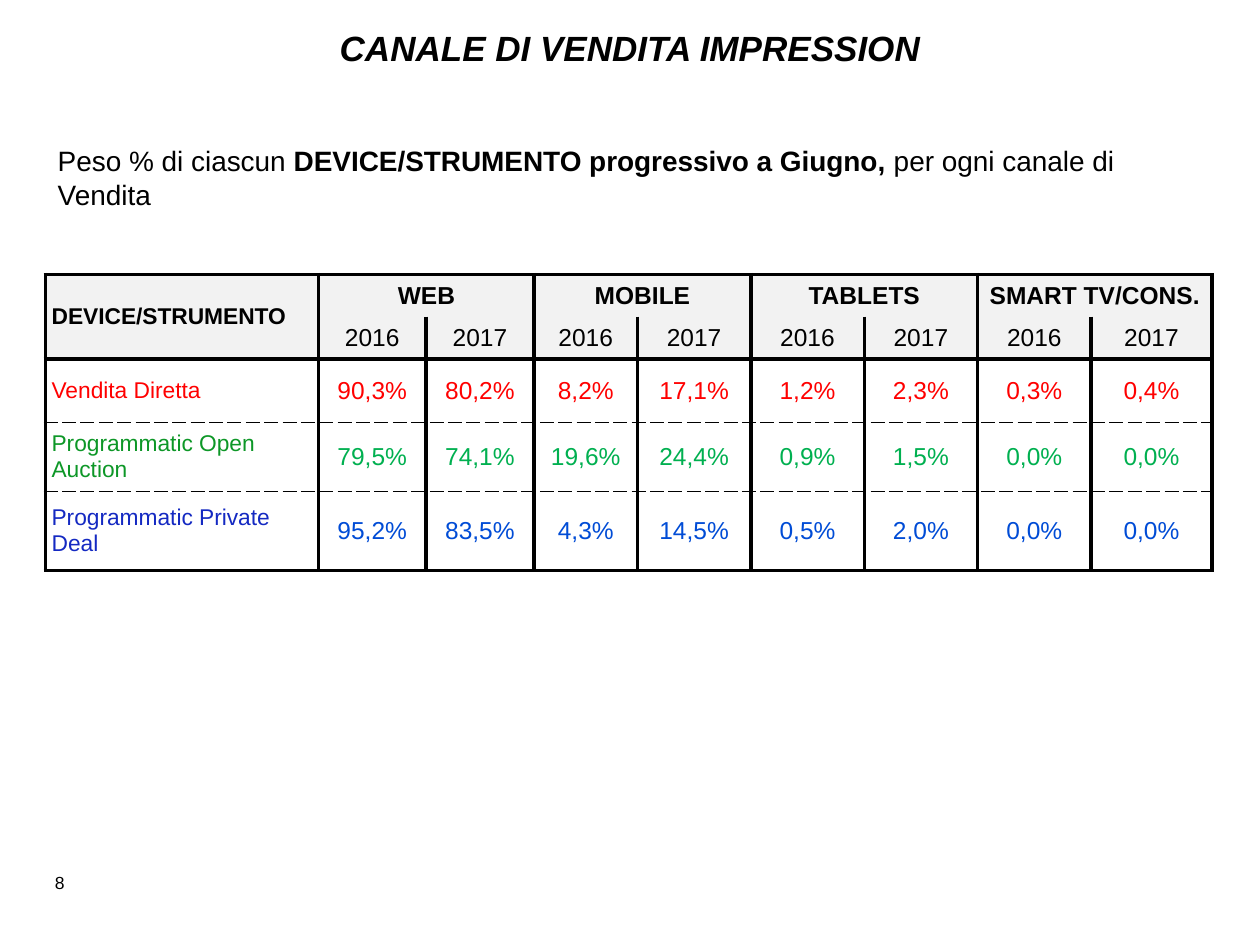
"""Builds the slide on the weight of each device by sales channel."""
from dataclasses import dataclass

import pptx
import pptx.dml.color
import pptx.enum.text
import pptx.oxml.ns
import pptx.util
from lxml import etree
from pptx.util import Inches

TITLE = "CANALE DI VENDITA IMPRESSION"
INTRO = [
    ("Peso % di ciascun ", False),
    ("DEVICE/STRUMENTO progressivo a Giugno,", True),
    (" per ogni canale di Vendita", False),
]
PAGE_NUMBER = "8"
CORNER = "DEVICE/STRUMENTO"
DEVICES = ["WEB", "MOBILE", "TABLETS", "SMART TV/CONS."]
YEARS = ["2016", "2017"]
CHANNELS = [
    (["Vendita Diretta"], "FF0000", "FF0000",
     ["90,3%", "80,2%", "8,2%", "17,1%", "1,2%", "2,3%", "0,3%", "0,4%"]),
    (["Programmatic Open Auction"], "0D9727", "00B050",
     ["79,5%", "74,1%", "19,6%", "24,4%", "0,9%", "1,5%", "0,0%", "0,0%"]),
    (["Programmatic Private", "Deal"], "1429C2", "004CD6",
     ["95,2%", "83,5%", "4,3%", "14,5%", "0,5%", "2,0%", "0,0%", "0,0%"]),
]
COLUMN_WIDTHS = [2.17, 0.85, 0.86, 0.82, 0.9, 0.9, 0.9, 0.9, 0.96]
ROW_HEIGHTS = [0.33, 0.33, 0.5, 0.55, 0.63]
HEADER_ROWS = 2
LABEL_INSETS = (0.05, 0.05, 0.05, 0.05)
VALUE_INSETS = (0.01, 0.01, 0.01, 0)
LEFT, CENTER, RIGHT = (
    pptx.enum.text.PP_ALIGN.LEFT,
    pptx.enum.text.PP_ALIGN.CENTER,
    pptx.enum.text.PP_ALIGN.RIGHT,
)


@dataclass(frozen=True)
class Theme:
    font: str = "Arial"
    ink: str = "000000"
    header: str = "F2F2F2"
    body: str = "FFFFFF"
    title: int = 20
    intro: int = 16
    value: int = 14
    label: int = 13
    number: int = 10
    strong: float = 2.25
    thin: float = 0.25


THEME = Theme()


def add_run(paragraph, text, size, color=THEME.ink, bold=False, italic=False):
    run = paragraph.add_run()
    run.text = text
    run.font.name = THEME.font
    run.font.size = pptx.util.Pt(size)
    run.font.bold = bold
    run.font.italic = italic
    run.font.color.rgb = pptx.dml.color.RGBColor.from_string(color)


def add_text(slide, area, align):
    frame = slide.shapes.add_textbox(*map(Inches, area)).text_frame
    frame.word_wrap = True
    frame.paragraphs[0].alignment = align
    return frame.paragraphs[0]


def fill_cell(cell, lines, size, align, insets, color=THEME.ink, bold=False):
    cell.margin_left, cell.margin_top, cell.margin_right, cell.margin_bottom = map(Inches, insets)
    cell.vertical_anchor = pptx.enum.text.MSO_ANCHOR.MIDDLE
    for index, line in enumerate(lines):
        frame = cell.text_frame
        paragraph = frame.add_paragraph() if index else frame.paragraphs[0]
        paragraph.alignment = align
        add_run(paragraph, line, size, color, bold)


def rule_above(row):
    """Gives the kind of rule along the top edge of a row."""
    if row in (0, HEADER_ROWS, len(ROW_HEIGHTS)):
        return "solid"
    return "sysDash" if row > HEADER_ROWS else None


def set_borders(cell, top, bottom):
    properties = cell._tc.get_or_add_tcPr()
    edges = {"lnL": "solid", "lnR": "solid", "lnT": top, "lnB": bottom}
    for position, (edge, dash) in enumerate(edges.items()):
        border = etree.Element(pptx.oxml.ns.qn(f"a:{edge}"))
        properties.insert(position, border)
        if dash is None:
            etree.SubElement(border, pptx.oxml.ns.qn("a:noFill"))
            continue
        width = THEME.strong if dash == "solid" else THEME.thin
        border.set("w", str(int(pptx.util.Pt(width))))
        fill = etree.SubElement(border, pptx.oxml.ns.qn("a:solidFill"))
        etree.SubElement(fill, pptx.oxml.ns.qn("a:srgbClr"), val=THEME.ink)
        etree.SubElement(border, pptx.oxml.ns.qn("a:prstDash"), val=dash)


def style_grid(table):
    for row in range(len(ROW_HEIGHTS)):
        for column in range(len(COLUMN_WIDTHS)):
            cell = table.cell(row, column)
            cell.fill.solid()
            background = THEME.header if row < HEADER_ROWS else THEME.body
            cell.fill.fore_color.rgb = pptx.dml.color.RGBColor.from_string(background)
            below = HEADER_ROWS if column == 0 and row < HEADER_ROWS else row + 1
            set_borders(cell, rule_above(row), rule_above(below))


def add_channel_table(slide):
    table = slide.shapes.add_table(
        len(ROW_HEIGHTS), len(COLUMN_WIDTHS), Inches(0.36), Inches(2.18),
        Inches(sum(COLUMN_WIDTHS)), Inches(sum(ROW_HEIGHTS)),
    ).table
    table.first_row = table.horz_banding = False
    for column, width in zip(table.columns, COLUMN_WIDTHS):
        column.width = Inches(width)
    for row, height in zip(table.rows, ROW_HEIGHTS):
        row.height = Inches(height)
    style_grid(table)

    corner = table.cell(0, 0)
    corner.merge(table.cell(HEADER_ROWS - 1, 0))
    fill_cell(corner, [CORNER], THEME.label, LEFT, LABEL_INSETS, bold=True)
    for index, device in enumerate(DEVICES):
        first = 1 + index * len(YEARS)
        heading = table.cell(0, first)
        heading.merge(table.cell(0, first + len(YEARS) - 1))
        fill_cell(heading, [device], THEME.value, CENTER, LABEL_INSETS, bold=True)
        for column, year in enumerate(YEARS, first):
            fill_cell(table.cell(1, column), [year], THEME.value, CENTER, LABEL_INSETS)
    for row, (name, name_color, value_color, shares) in enumerate(CHANNELS, HEADER_ROWS):
        fill_cell(table.cell(row, 0), name, THEME.label, LEFT, LABEL_INSETS, name_color)
        for column, share in enumerate(shares, 1):
            fill_cell(table.cell(row, column), [share], THEME.value, CENTER, VALUE_INSETS, value_color)


def main():
    deck = pptx.Presentation()
    deck.slide_width, deck.slide_height = Inches(10), Inches(7.5)
    slide = deck.slides.add_slide(deck.slide_layouts[6])
    add_run(add_text(slide, (0.18, 6.87, 0.43, 0.27), RIGHT), PAGE_NUMBER, THEME.number)
    add_channel_table(slide)
    title = add_text(slide, (0, 0.16, 10, 0.44), CENTER)
    add_run(title, TITLE, THEME.title, bold=True, italic=True)
    intro = add_text(slide, (0.36, 1.09, 9.28, 0.89), LEFT)
    for text, bold in INTRO:
        add_run(intro, text, THEME.intro, bold=bold)
    deck.save("out.pptx")


if __name__ == "__main__":
    main()
